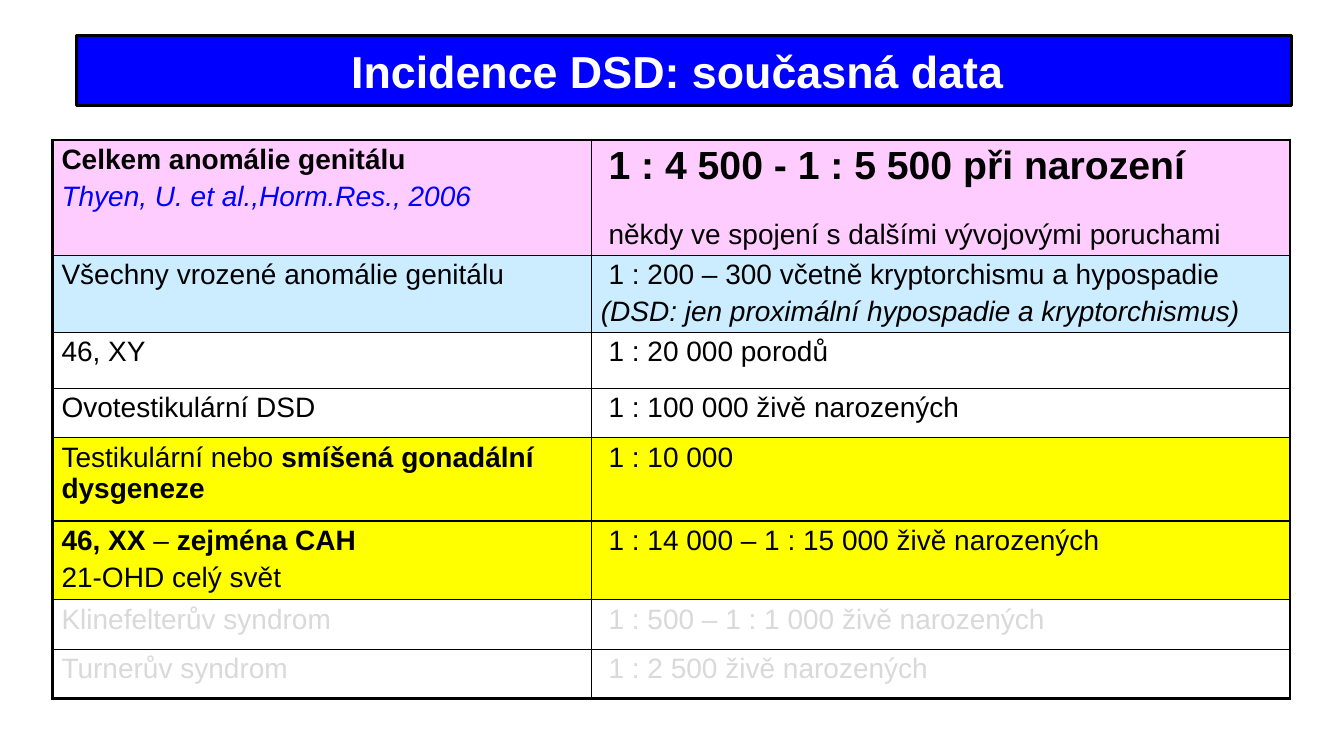
from lxml.etree import SubElement
from pptx import Presentation
from pptx.dml.color import RGBColor
from pptx.enum.shapes import MSO_SHAPE
from pptx.enum.text import MSO_ANCHOR, PP_ALIGN
from pptx.oxml.ns import qn
from pptx.util import Cm, Pt

BLACK = RGBColor(0x00, 0x00, 0x00)
WHITE = RGBColor(0xFF, 0xFF, 0xFF)
BLUE = RGBColor(0x00, 0x00, 0xFF)
PINK = RGBColor(0xFF, 0xCC, 0xFF)
SKY = RGBColor(0xCC, 0xEC, 0xFF)
YELLOW = RGBColor(0xFF, 0xFF, 0x00)
GREY = RGBColor(0xD9, 0xD9, 0xD9)

THICK, THIN = Pt(2.25), Pt(1)
COLUMN_WIDTHS = (13.59, 17.6)
BOLD = {"bold": True}
ITALIC = {"italic": True}
PALE = {"color": GREY}

# Each row: height in cm, fill, left paragraphs, right paragraphs
ROWS = [
    (2.9, PINK,
     [[("Celkem anomálie genitálu", BOLD)],
      [("Thyen, U. et al.,Horm.Res., 2006", {"italic": True, "color": BLUE})]],
     [[(" ", {}), ("1 : 4 500 - 1 : 5 500 při narození", {"bold": True, "size": 28})],
      [(" někdy ve spojení s dalšími vývojovými poruchami", {})]]),
    (1.94, SKY,
     [[("Všechny vrozené anomálie genitálu", {})]],
     [[(" 1 : 200 – 300 včetně kryptorchismu a hypospadie", {})],
      [("(DSD: jen proximální hypospadie a kryptorchismus)", ITALIC)]]),
    (1.41, None, [[("46, XY", {})]], [[(" 1 : 20 000 porodů", {})]]),
    (1.24, None, [[("Ovotestikulární DSD", {})]],
     [[(" 1 : 100 000 živě narozených", {})]]),
    (2.11, YELLOW,
     [[("Testikulární nebo ", {}), ("smíšená gonadální dysgeneze", BOLD)]],
     [[(" 1 : 10 000", {})]]),
    (1.98, YELLOW,
     [[("46, XX", BOLD), (" – ", {}), ("zejména CAH", BOLD)],
      [("21-OHD celý svět", {})]],
     [[(" 1 : 14 000 – 1 : 15 000 živě narozených", {})]]),
    (1.25, None, [[("Klinefelterův syndrom", PALE)]],
     [[(" 1 : 500 – 1 : 1 000 živě narozených", PALE)]]),
    (1.25, None, [[("Turnerův syndrom", PALE)]],
     [[(" 1 : 2 500 živě narozených", PALE)]]),
]


def add_span(para, text, size=20, bold=False, italic=False, color=BLACK):
    """Add one formatted run to a paragraph."""
    span = para.add_run()
    span.text = text
    span.font.name = "Arial"
    span.font.size = Pt(size)
    span.font.bold = bold
    span.font.italic = italic
    span.font.color.rgb = color


def set_borders(cell, widths):
    """Draw black left, right, top and bottom borders of the given widths."""
    properties = cell._tc.get_or_add_tcPr()
    for side, width in zip(("lnL", "lnR", "lnT", "lnB"), widths):
        line = SubElement(properties, qn(f"a:{side}"), w=str(int(width)))
        fill = SubElement(line, qn("a:solidFill"))
        SubElement(fill, qn("a:srgbClr"), val=str(BLACK))


def fill_cell(cell, paragraphs, color, gap):
    """Fill a cell with colour and paragraphs set apart by a gap."""
    cell.margin_left = cell.margin_right = Cm(0.23)
    cell.margin_top = cell.margin_bottom = Cm(0.11)
    cell.vertical_anchor = MSO_ANCHOR.TOP
    if color is None:
        cell.fill.background()
    else:
        cell.fill.solid()
        cell.fill.fore_color.rgb = color
    frame = cell.text_frame
    for index, spans in enumerate(paragraphs):
        para = frame.add_paragraph() if index else frame.paragraphs[0]
        para.space_before = Pt(gap if index else 0)
        for text, style in spans:
            add_span(para, text, **style)


def add_title(page, left, top, width, height):
    """Place the blue title bar."""
    box = page.shapes.add_shape(
        MSO_SHAPE.RECTANGLE, Cm(left), Cm(top), Cm(width), Cm(height))
    box.shadow.inherit = False
    box.fill.solid()
    box.fill.fore_color.rgb = BLUE
    box.line.color.rgb = BLACK
    box.line.width = THICK
    frame = box.text_frame
    frame.word_wrap = True
    frame.vertical_anchor = MSO_ANCHOR.MIDDLE
    para = frame.paragraphs[0]
    para.alignment = PP_ALIGN.CENTER
    add_span(para, "Incidence DSD: současná data ", size=32, bold=True, color=WHITE)


def add_incidence_table(page, left, top):
    """Place the incidence table with a thick outer frame."""
    height = sum(row[0] for row in ROWS)
    table = page.shapes.add_table(
        len(ROWS), len(COLUMN_WIDTHS), Cm(left), Cm(top),
        Cm(sum(COLUMN_WIDTHS)), Cm(height)).table
    table.first_row = table.horz_banding = False
    for column, width in zip(table.columns, COLUMN_WIDTHS):
        column.width = Cm(width)
    last_row, last_column = len(ROWS) - 1, len(COLUMN_WIDTHS) - 1
    for y, (row_height, color, *cells) in enumerate(ROWS):
        table.rows[y].height = Cm(row_height)
        for x, paragraphs in enumerate(cells):
            cell = table.cell(y, x)
            outer = (x == 0, x == last_column, y == 0, y == last_row)
            set_borders(cell, [THICK if edge else THIN for edge in outer])
            gap = 22 if (y, x) == (0, last_column) else 4
            fill_cell(cell, paragraphs, color, gap)


def main():
    """Build the slide and save it."""
    deck = Presentation()
    deck.slide_width, deck.slide_height = Cm(33.87), Cm(19.05)
    page = deck.slides.add_slide(deck.slide_layouts[6])
    add_title(page, 1.93, 0.89, 30.61, 1.78)
    add_incidence_table(page, 1.32, 3.53)
    deck.save("out.pptx")


if __name__ == "__main__":
    main()
